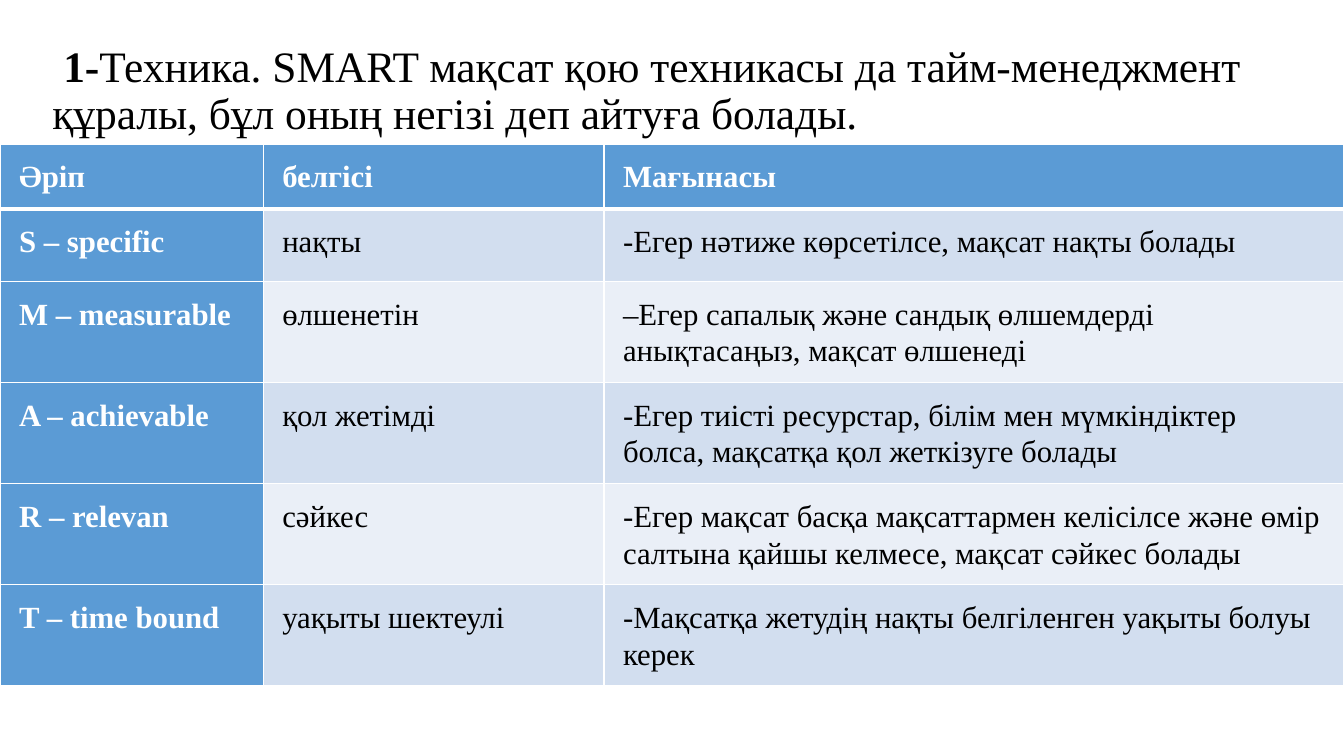
from lxml import etree
from pptx import Presentation
from pptx.dml.color import RGBColor
from pptx.enum.text import MSO_ANCHOR, MSO_AUTO_SIZE, PP_ALIGN
from pptx.oxml.ns import qn
from pptx.util import Inches, Pt

MIDDLE, LEFT, NO_FIT = MSO_ANCHOR.MIDDLE, PP_ALIGN.LEFT, MSO_AUTO_SIZE.NONE
TITLE_ONLY = 5
COLORS = {"text": "000000", "light": "FFFFFF", "accent": "5B9BD5",
          "odd": "D2DEEF", "even": "EAEFF7"}
FONT = "Times New Roman"
TITLE_BOX = (0.42, 0.19, 12.4, 1.45)
TABLE_BOX = (0, 1.43, 13.33, 4.74)
COLUMN_WIDTHS = (2.61, 3.38, 7.34)
ROW_HEIGHTS = (0.48, 0.72, 0.94, 0.94, 0.94, 0.72)
CELL_FORMAT = {"margin_left": Inches(0.19), "margin_right": Inches(0.19),
               "margin_top": Inches(0.14), "margin_bottom": Inches(0.14)}
TITLE_FORMAT = {"vertical_anchor": MIDDLE, "word_wrap": True, "auto_size": NO_FIT}

TITLE = ((" 1-", True),
         ("Техника. SMART мақсат қою техникасы да тайм-менеджмент құралы, "
          "бұл оның негізі деп айтуға болады.", False))
SMART_ROWS = (
    ("Әріп", "белгісі", "Мағынасы"),
    ("S – specific", "нақты", "-Егер нәтиже көрсетілсе, мақсат нақты болады"),
    ("M – measurable", "өлшенетін",
     "–Егер сапалық және сандық өлшемдерді анықтасаңыз, мақсат өлшенеді"),
    ("A – achievable", "қол жетімді",
     "-Егер тиісті ресурстар, білім мен мүмкіндіктер болса, мақсатқа қол жеткізуге болады"),
    ("R – relevan", "сәйкес",
     "-Егер мақсат басқа мақсаттармен келісілсе және өмір салтына қайшы келмесе, "
     "мақсат сәйкес болады"),
    ("T – time bound", "уақыты шектеулі",
     "-Мақсатқа жетудің нақты белгіленген уақыты болуы керек"),
)


def set_format(target, values):
    for name, value in values.items():
        setattr(target, name, value)


def add_text(paragraph, wording, size, color, bold):
    run = paragraph.add_run()
    run.text = wording
    set_format(run.font, {"name": FONT, "size": Pt(size), "bold": bold})
    run.font.color.rgb = RGBColor.from_string(COLORS[color])


def set_borders(cell, widths):
    properties = cell._tc.get_or_add_tcPr()
    for position, (side, width) in enumerate(widths.items()):
        border = etree.Element(qn(f"a:ln{side}"), w=str(Pt(width)))
        fill = etree.SubElement(border, qn("a:solidFill"))
        etree.SubElement(fill, qn("a:srgbClr"), val=COLORS["light"])
        properties.insert(position, border)


def add_title(slide, box):
    title = slide.shapes.title
    set_format(title, dict(zip(("left", "top", "width", "height"), map(Inches, box))))
    set_format(title.text_frame, TITLE_FORMAT)
    paragraph = title.text_frame.paragraphs[0]
    set_format(paragraph, {"alignment": LEFT, "line_spacing": 0.9})
    for wording, bold in TITLE:
        add_text(paragraph, wording, 31, "text", bold)


def add_smart_table(slide, box):
    table = slide.shapes.add_table(len(SMART_ROWS), len(COLUMN_WIDTHS),
                                   *map(Inches, box)).table
    for column, width in zip(table.columns, COLUMN_WIDTHS):
        column.width = Inches(width)
    for row, height in zip(table.rows, ROW_HEIGHTS):
        row.height = Inches(height)
    for r, wordings in enumerate(SMART_ROWS):
        for c, wording in enumerate(wordings):
            cell = table.cell(r, c)
            heading = r == 0 or c == 0
            band = "accent" if heading else "odd" if r % 2 else "even"
            set_format(cell, CELL_FORMAT)
            cell.fill.solid()
            cell.fill.fore_color.rgb = RGBColor.from_string(COLORS[band])
            set_borders(cell, {"L": 1, "R": 1, "T": 3 if r == 1 else 1,
                               "B": 3 if r == 0 else 1})
            paragraph = cell.text_frame.paragraphs[0]
            paragraph.line_spacing = 1.07
            add_text(paragraph, wording, 22, "light" if heading else "text", heading)


def main():
    deck = Presentation()
    set_format(deck, {"slide_width": Inches(13.33), "slide_height": Inches(7.5)})
    slide = deck.slides.add_slide(deck.slide_layouts[TITLE_ONLY])
    add_title(slide, TITLE_BOX)
    add_smart_table(slide, TABLE_BOX)
    deck.save("out.pptx")


if __name__ == "__main__":
    main()
